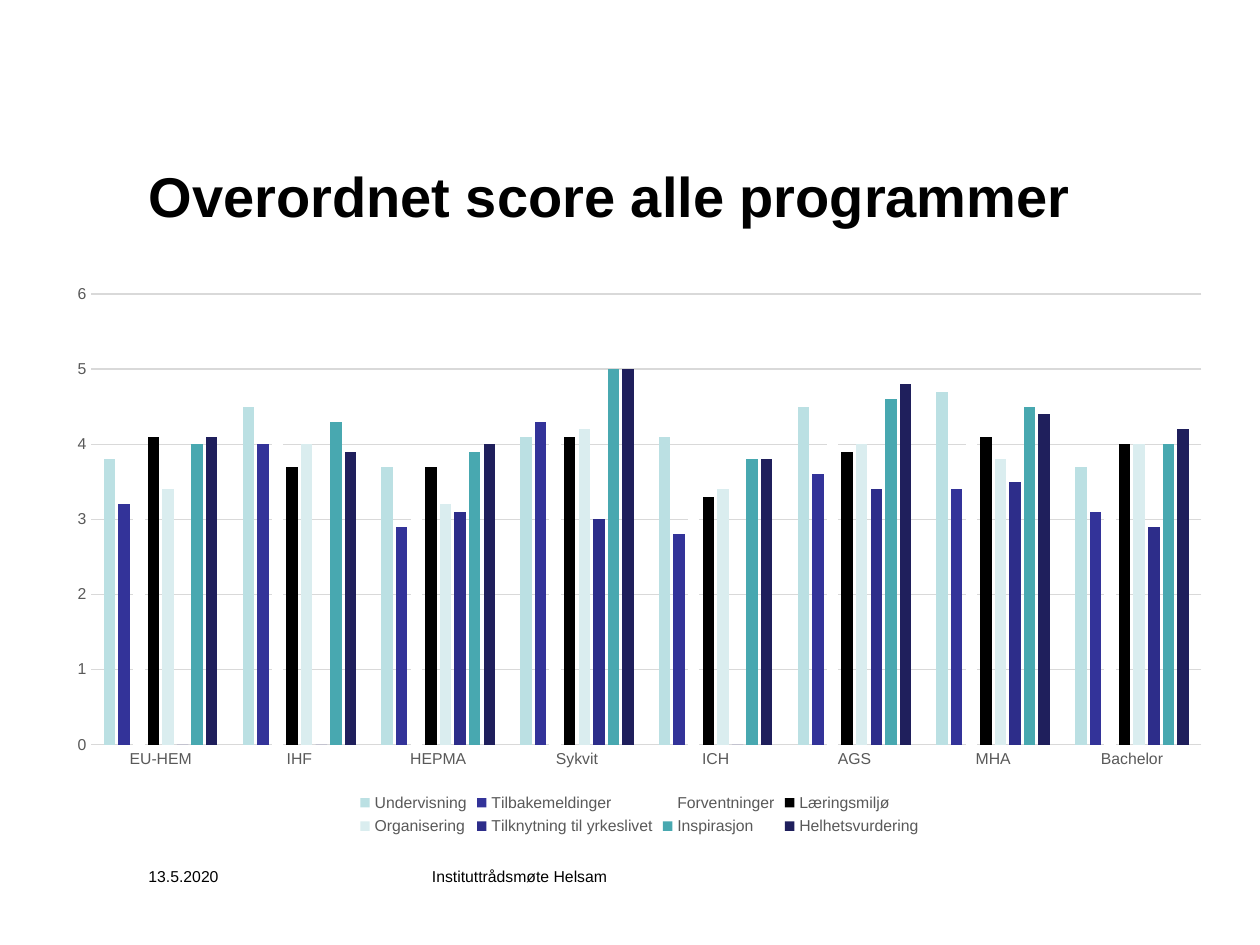
from pptx import Presentation
from pptx.chart.data import CategoryChartData
from pptx.dml.color import RGBColor
from pptx.enum import chart as ch, text as tx
from pptx.util import Inches, Pt

FONT = "Arial"
BLACK, GREY, RULE = "000000", "595959", "D9D9D9"

PROGRAMMES = ["EU-HEM", "IHF", "HEPMA", "Sykvit", "ICH", "AGS", "MHA", "Bachelor"]
SCORES = [
    ("Undervisning", "BBE0E3", (3.8, 4.5, 3.7, 4.1, 4.1, 4.5, 4.7, 3.7)),
    ("Tilbakemeldinger", "333399", (3.2, 4, 2.9, 4.3, 2.8, 3.6, 3.4, 3.1)),
    ("Forventninger", "FFFFFF", (3.5, 4.3, 3.5, 4.7, 3.7, 4.2, 4.1, 3.9)),
    ("Læringsmiljø", "000000", (4.1, 3.7, 3.7, 4.1, 3.3, 3.9, 4.1, 4)),
    ("Organisering", "DAEDEF", (3.4, 4, 3.2, 4.2, 3.4, 4, 3.8, 4)),
    ("Tilknytning til yrkeslivet", "2D2D8A", (0, 0, 3.1, 3, 0, 3.4, 3.5, 2.9)),
    ("Inspirasjon", "48A8B0", (4, 4.3, 3.9, 5, 3.8, 4.6, 4.5, 4)),
    ("Helhetsvurdering", "1F1F5C", (4.1, 3.9, 4, 5, 3.8, 4.8, 4.4, 4.2)),
]


def rgb(value):
    return RGBColor.from_string(value)


def set_all(target, values):
    for name, value in values.items():
        setattr(target, name, value)


def style_font(font, size, color, bold=False):
    set_all(font, {"name": FONT, "size": Pt(size), "bold": bold})
    font.color.rgb = rgb(color)


def style_line(line, color):
    line.color.rgb = rgb(color)
    line.width = Pt(0.75)


def add_title(slide, wording):
    title = slide.shapes.title
    set_all(title, {"left": Inches(1.08), "top": Inches(0.92),
                    "width": Inches(8.42), "height": Inches(1.25)})
    set_all(title.text_frame, {"text": wording, "word_wrap": True,
                               "vertical_anchor": tx.MSO_ANCHOR.MIDDLE})
    heading = title.text_frame.paragraphs[0]
    heading.alignment = tx.PP_ALIGN.LEFT
    style_font(heading.font, 32, BLACK, bold=True)


def add_footer(slide, wording, left, width):
    frame = slide.shapes.add_textbox(
        Inches(left), Inches(6.83), Inches(width), Inches(0.5)).text_frame
    set_all(frame, {"text": wording, "word_wrap": True})
    style_font(frame.paragraphs[0].font, 9, BLACK)


def style_axis(axis):
    set_all(axis, {"major_tick_mark": ch.XL_TICK_MARK.NONE,
                   "minor_tick_mark": ch.XL_TICK_MARK.NONE})
    style_font(axis.tick_labels.font, 9, GREY)


def add_score_chart(slide):
    data = CategoryChartData(number_format="General")
    data.categories = PROGRAMMES
    for name, _, values in SCORES:
        data.add_series(name, values)
    chart = slide.shapes.add_chart(
        ch.XL_CHART_TYPE.COLUMN_CLUSTERED, Inches(0.43), Inches(2.17),
        Inches(9.29), Inches(4.5), data).chart
    style_font(chart.font, 10, BLACK)
    set_all(chart, {"has_title": False, "has_legend": True})

    # Columns
    plot = chart.plots[0]
    set_all(plot, {"gap_width": 219, "overlap": -27, "vary_by_categories": False})
    for series, (_, color, _) in zip(plot.series, SCORES):
        series.format.fill.solid()
        series.format.fill.fore_color.rgb = rgb(color)
        series.invert_if_negative = False

    # Axes
    programmes, scores = chart.category_axis, chart.value_axis
    style_axis(programmes)
    style_line(programmes.format.line, RULE)
    style_axis(scores)
    set_all(scores, {"minimum_scale": 0, "maximum_scale": 6, "major_unit": 1,
                     "has_major_gridlines": True})
    scores.format.line.fill.background()
    style_line(scores.major_gridlines.format.line, RULE)

    # Legend
    set_all(chart.legend, {"position": ch.XL_LEGEND_POSITION.BOTTOM,
                           "include_in_layout": False})
    style_font(chart.legend.font, 9, GREY)


def main():
    deck = Presentation()
    set_all(deck, {"slide_width": Inches(10), "slide_height": Inches(7.5)})
    slide = deck.slides.add_slide(deck.slide_layouts[5])  # title only
    add_title(slide, "Overordnet score alle programmer")
    add_footer(slide, "13.5.2020", 1.08, 2.08)
    add_footer(slide, "Instituttrådsmøte Helsam", 3.33, 5.25)
    add_score_chart(slide)
    deck.save("out.pptx")


if __name__ == "__main__":
    main()
